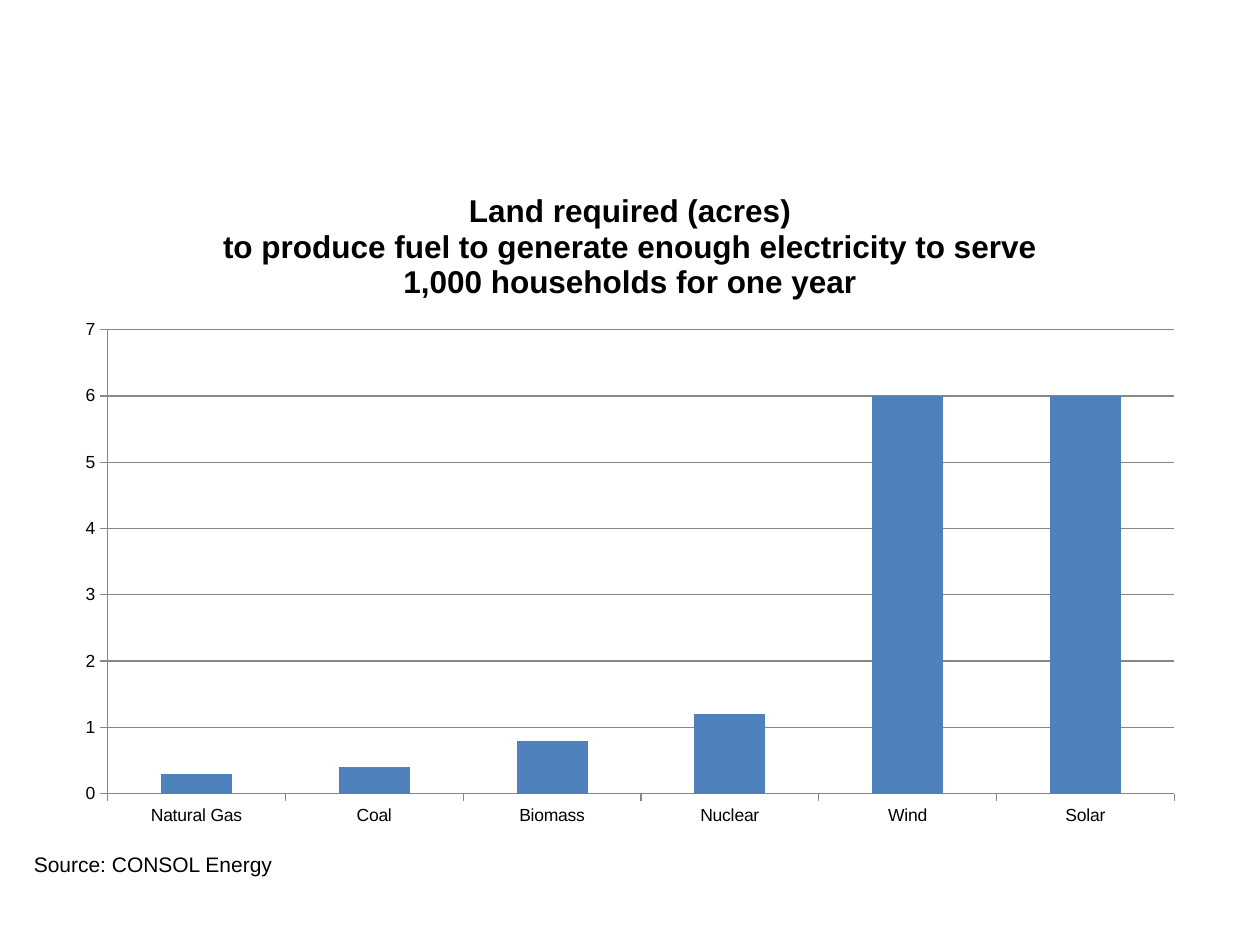
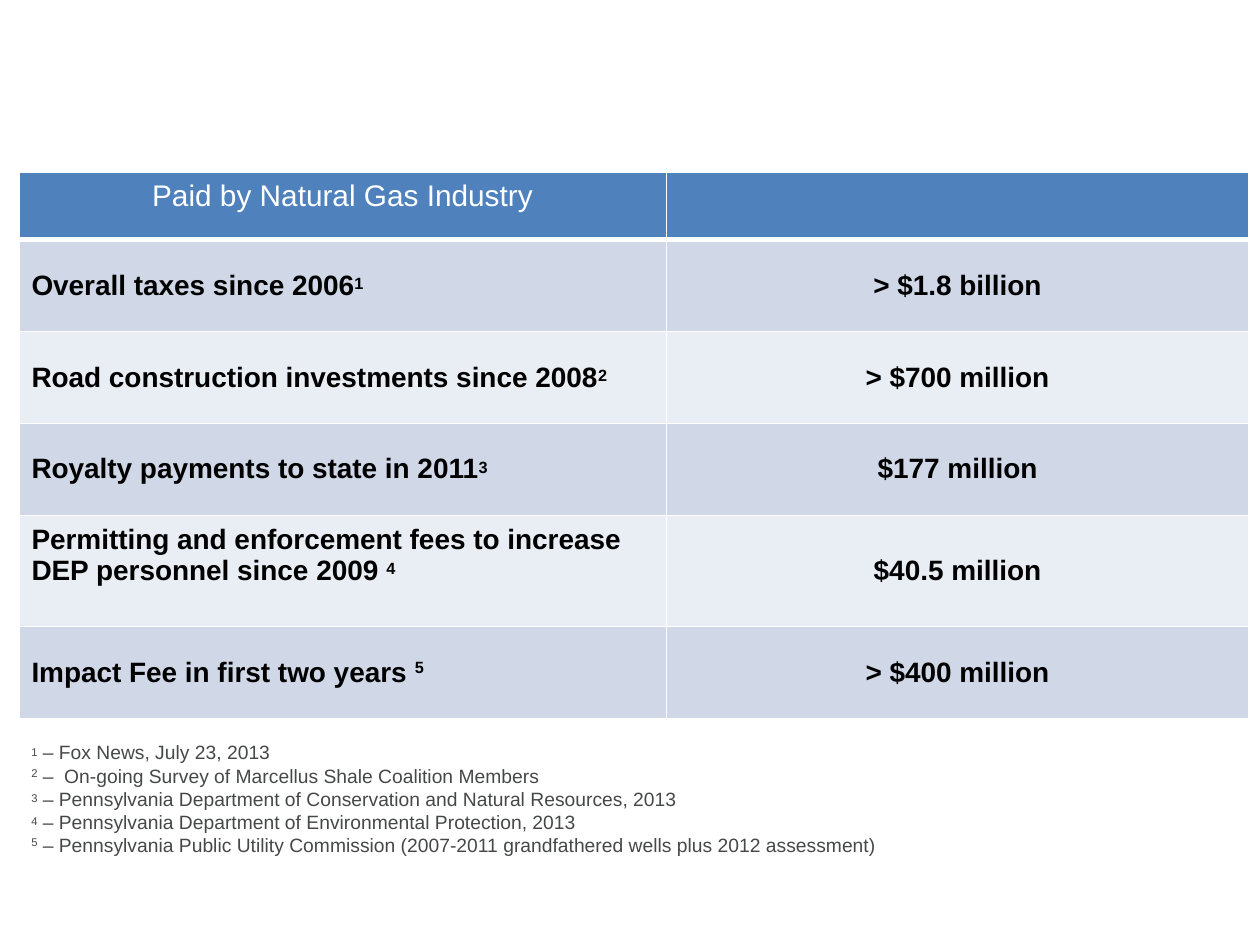
from typing import NamedTuple

from lxml import etree
from pptx import Presentation
from pptx.chart.data import CategoryChartData
from pptx.dml.color import RGBColor
from pptx.enum.chart import XL_CHART_TYPE, XL_TICK_MARK
from pptx.enum.text import MSO_ANCHOR, PP_ALIGN
from pptx.oxml.ns import qn
from pptx.util import Inches, Pt

COLUMN = XL_CHART_TYPE.COLUMN_CLUSTERED
OUTSIDE, NO_TICK = XL_TICK_MARK.OUTSIDE, XL_TICK_MARK.NONE
TOP, MIDDLE = MSO_ANCHOR.TOP, MSO_ANCHOR.MIDDLE
LEFT, CENTER = PP_ALIGN.LEFT, PP_ALIGN.CENTER

# Shared style
FACE = "Arial"
BLUE, BLACK, WHITE, GREY = "4F81BD", "000000", "FFFFFF", "464847"
GRID = "878787"
BANDS = ("D0D8E8", "E9EDF4")


class Style(NamedTuple):
    size: float
    color: str = BLACK
    bold: bool = False


class Part(NamedTuple):
    text: str
    raised: int = 0  # superscript, percent


class Fee(NamedTuple):
    name: str
    mark: str
    amount: str
    raised: int = 20
    height: float = 0.73
    foot: float = 0.05  # bottom margin of the name


LABEL, HEAD = Style(10), Style(18, bold=True)
SOURCE, NOTE = Style(12), Style(11, GREY)
TOP_ROW, BODY = Style(17, WHITE), Style(16, bold=True)

USES = {"Natural Gas": 0.3, "Coal": 0.4, "Biomass": 0.8,
        "Nuclear": 1.2, "Wind": 6, "Solar": 6}
TITLE = ("Land required (acres)\n"
         "to produce fuel to generate enough electricity to serve\n"
         "1,000 households for one year")

FEES = [
    Fee("Overall taxes since 2006", "1", "> $1.8 billion"),
    Fee("Road construction investments since 2008", "2", "> $700 million"),
    Fee("Royalty payments to state in 2011", "3", "$177 million"),
    Fee("Permitting and enforcement fees to increase DEP personnel since 2009 ",
        "4", "$40.5 million", height=0.84, foot=0.3),
    Fee("Impact Fee in first two years ", "5", "> $400 million", raised=30),
]
NOTES = [
    (20, " – Fox News, July 23, 2013"),
    (30, " –  On-going Survey of Marcellus Shale Coalition Members"),
    (20, " – Pennsylvania Department of Conservation and Natural Resources, 2013"),
    (20, " – Pennsylvania Department of Environmental Protection, 2013"),
    (30, " – Pennsylvania Public Utility Commission "
         "(2007-2011 grandfathered wells plus 2012 assessment)"),
]


def rgb(code: str) -> RGBColor:
    return RGBColor.from_string(code)


def set_font(font, style: Style) -> None:
    font.name, font.size, font.bold = FACE, Pt(style.size), style.bold
    font.color.rgb = rgb(style.color)


def write(para, parts: list[Part], style: Style, align=LEFT) -> None:
    para.alignment = align
    for part in parts:
        run = para.add_run()
        run.text = part.text
        set_font(run.font, style)
        if part.raised:
            run.font._element.set("baseline", str(part.raised * 1000))


def add_text(slide, box: tuple, lines: list[list[Part]], style: Style,
             wrap: bool = True) -> None:
    frame = slide.shapes.add_textbox(*map(Inches, box)).text_frame
    frame.word_wrap = wrap
    for i, parts in enumerate(lines):
        para = frame.add_paragraph() if i else frame.paragraphs[0]
        write(para, parts, style)


def add_edges(cell, base: float = 1) -> None:
    props = cell._tc.get_or_add_tcPr()
    for i, (tag, width) in enumerate(
            (("lnL", 1), ("lnR", 1), ("lnT", 1), ("lnB", base))):
        line = etree.Element(qn(f"a:{tag}"), w=str(Pt(width)))
        fill = etree.SubElement(line, qn("a:solidFill"))
        etree.SubElement(fill, qn("a:srgbClr"), val=WHITE)
        props.insert(i, line)


def fill_cell(cell, parts: list[Part], style: Style, back: str,
              align=CENTER, anchor=MIDDLE, base: float = 1) -> None:
    cell.fill.solid()
    cell.fill.fore_color.rgb = rgb(back)
    cell.vertical_anchor = anchor
    add_edges(cell, base)
    write(cell.text_frame.paragraphs[0], parts, style, align)


def draw_land(slide) -> None:
    data = CategoryChartData()
    data.categories = list(USES)
    data.add_series("Series 1", list(USES.values()))
    box = map(Inches, (0.5, 1.33, 9, 5.33))
    chart = slide.shapes.add_chart(COLUMN, *box, data).chart
    set_font(chart.font, LABEL)
    chart.has_legend = False

    # Title
    chart.has_title = True
    frame = chart.chart_title.text_frame
    frame.text = TITLE
    for para in frame.paragraphs:
        for run in para.runs:
            set_font(run.font, HEAD)
    chart.chart_title.include_in_layout = False

    # Bars
    plot = chart.plots[0]
    plot.gap_width, plot.vary_by_categories = 150, False
    fill = plot.series[0].format.fill
    fill.solid()
    fill.fore_color.rgb = rgb(BLUE)

    # Axes
    scale = chart.value_axis
    scale.minimum_scale, scale.maximum_scale, scale.major_unit = 0, 7, 1
    scale.has_major_gridlines = True
    for axis in (chart.category_axis, scale):
        axis.major_tick_mark, axis.minor_tick_mark = OUTSIDE, NO_TICK
        set_font(axis.tick_labels.font, LABEL)
    for item in (chart.category_axis, scale, scale.major_gridlines):
        item.format.line.color.rgb = rgb(GRID)
        item.format.line.width = Pt(0.75)

    add_text(slide, (0.17, 6.71, 2.11, 0.3),
             [[Part("Source: CONSOL Energy")]], SOURCE, wrap=False)


def draw_fees(slide) -> None:
    box = map(Inches, (0.15, 1.37, 9.76, 4.29))
    table = slide.shapes.add_table(len(FEES) + 1, 2, *box).table
    table.horz_banding = False
    for col, width in zip(table.columns, (5.14, 4.62)):
        col.width = Inches(width)

    # Header row
    table.rows[0].height = Inches(0.53)
    for col, parts in enumerate(([Part("Paid by Natural Gas Industry")], [])):
        fill_cell(table.cell(0, col), parts, TOP_ROW, BLUE, anchor=TOP, base=3)

    # Banded rows
    for i, fee in enumerate(FEES):
        row, back = i + 1, BANDS[i % 2]
        table.rows[row].height = Inches(fee.height)
        name = table.cell(row, 0)
        fill_cell(name, [Part(fee.name), Part(fee.mark, fee.raised)],
                  BODY, back, LEFT)
        name.margin_bottom = Inches(fee.foot)
        fill_cell(table.cell(row, 1), [Part(fee.amount)], BODY, back)

    # Footnotes
    lines = [[Part(str(i), raised), Part(text)]
             for i, (raised, text) in enumerate(NOTES, 1)]
    add_text(slide, (0.15, 5.83, 9.66, 1.03), lines, NOTE)


def main() -> None:
    deck = Presentation()
    deck.slide_width, deck.slide_height = Inches(10), Inches(7.5)
    for draw in (draw_land, draw_fees):
        draw(deck.slides.add_slide(deck.slide_layouts[6]))
    deck.save("out.pptx")


if __name__ == "__main__":
    main()
